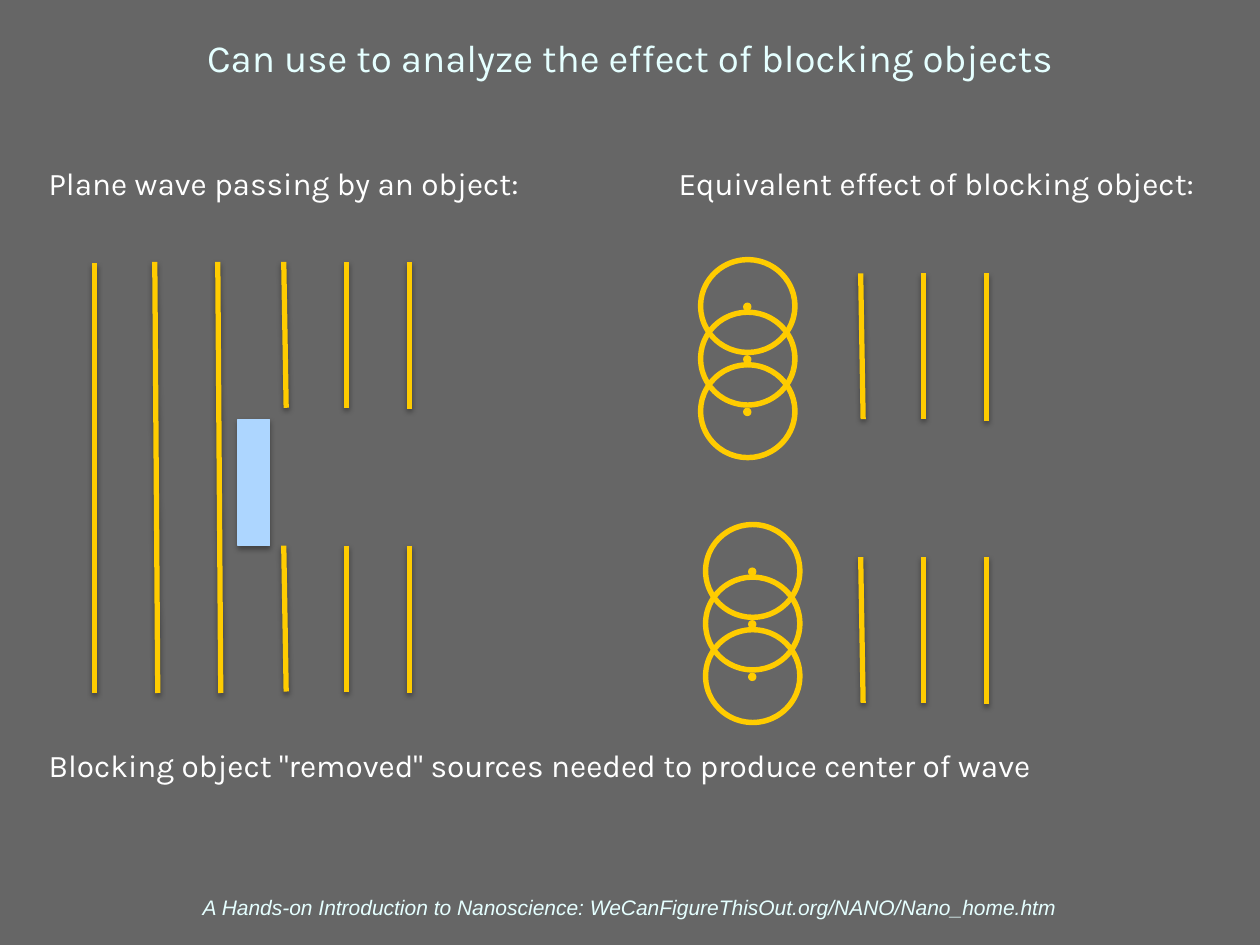
from typing import NamedTuple

from lxml import etree
from pptx import Presentation
from pptx.dml.color import RGBColor
from pptx.enum.shapes import MSO_CONNECTOR as CONN, MSO_SHAPE as SHAPE
from pptx.enum.text import MSO_ANCHOR as ANCHOR, PP_ALIGN as ALIGN
from pptx.oxml.ns import qn
from pptx.util import Cm, Pt

GOLD, BLUE, PALE, WHITE, GREY = "FFCC00", "ADD6FF", "E5FFFF", "FFFFFF", "666666"


class Label(NamedTuple):
    text: str
    x: float
    y: float
    w: float
    h: float
    font: dict
    anchor: ANCHOR = ANCHOR.TOP
    align: ALIGN = ALIGN.LEFT


class Front(NamedTuple):
    """A wave front, drawn as a line from top to bottom."""
    x1: float
    y1: float
    x2: float
    y2: float


class Origin(NamedTuple):
    x: float
    y: float


TITLE = {"name": "Karla", "size": Pt(22), "color": PALE}
BODY = {"name": "Karla", "size": Pt(18), "color": WHITE}
FOOTER = {"name": "Arial", "size": Pt(12), "italic": True, "color": PALE}

LABELS = [
    Label("A Hands-on Introduction to Nanoscience: "
          "WeCanFigureThisOut.org/NANO/Nano_home.htm",
          0.85, 17.93, 23.7, 0.74, FOOTER, ANCHOR.BOTTOM, ALIGN.CENTER),
    Label("Can use to analyze the effect of blocking objects",
          0.85, 0.21, 23.7, 1.9, TITLE, ANCHOR.MIDDLE, ALIGN.CENTER),
    Label("Plane wave passing by an object:", 0.85, 3.18, 12, 1, BODY),
    Label("Equivalent effect of blocking object:", 13.55, 3.18, 11.8, 1, BODY),
    Label('Blocking object "removed" sources needed to produce center of wave',
          0.85, 14.91, 23.7, 1, BODY),
]
FULL_FRONTS = [
    Front(1.91, 5.31, 1.91, 13.97),
    Front(3.12, 5.28, 3.18, 13.97),
    Front(4.39, 5.28, 4.45, 13.97),
]
SHORT_FRONTS = [Origin(5.72, 5.28), Origin(5.72, 11),
                Origin(17.35, 5.51), Origin(17.35, 11.23)]
FRONT_GAP = 1.27
LEANS_AND_HEIGHTS = [(0.05, 2.94), (0, 2.94), (0, 2.97)]
SOURCES = [Origin(14.07, 5.18), Origin(14.17, 10.52)]
SOURCE_GAP = 1.06
SOURCE_COUNT = 3


def rgb(value: str) -> RGBColor:
    return RGBColor.from_string(value)


def add_shadow(sp, distance: float, opacity: int) -> None:
    """Add a soft black shadow that falls straight down."""
    effects = etree.SubElement(sp._element.spPr, qn("a:effectLst"))
    shadow = etree.SubElement(effects, qn("a:outerShdw"), blurRad=str(Pt(3)),
                              dist=str(Pt(distance)), dir="5400000", rotWithShape="0")
    color = etree.SubElement(shadow, qn("a:srgbClr"), val="000000")
    etree.SubElement(color, qn("a:alpha"), val=str(opacity * 1000))


def add_label(s, label: Label) -> None:
    tf = s.shapes.add_textbox(*map(Cm, (label.x, label.y, label.w, label.h))).text_frame
    frame = {"word_wrap": True, "vertical_anchor": label.anchor}
    frame |= {f"margin_{side}": Cm(0.13) for side in ("left", "top", "right", "bottom")}
    for key, value in frame.items():
        setattr(tf, key, value)
    p = tf.paragraphs[0]
    p.alignment = label.align
    r = p.add_run()
    r.text = label.text
    for key, value in label.font.items():
        if key == "color":
            r.font.color.rgb = rgb(value)
        else:
            setattr(r.font, key, value)


def add_filled(s, kind: SHAPE, x: float, y: float, w: float, h: float, color: str):
    sp = s.shapes.add_shape(kind, Cm(x), Cm(y), Cm(w), Cm(h))
    sp.fill.solid()
    sp.fill.fore_color.rgb = rgb(color)
    sp.line.fill.background()
    return sp


def add_front(s, front: Front) -> None:
    line = s.shapes.add_connector(CONN.STRAIGHT, *map(Cm, front))
    line.line.color.rgb = rgb(GOLD)
    line.line.width = Pt(3)
    add_shadow(line, 1.6, 38)


def add_short_fronts(s, origin: Origin) -> None:
    for i, (lean, height) in enumerate(LEANS_AND_HEIGHTS):
        x = origin.x + i * FRONT_GAP
        add_front(s, Front(x, origin.y, x + lean, origin.y + height))


def add_sources(s, origin: Origin) -> None:
    """Draw a column of point sources, each with its circular wave."""
    for i in range(SOURCE_COUNT):
        y = origin.y + i * SOURCE_GAP
        dot = add_filled(s, SHAPE.OVAL, origin.x + 0.91, y + 0.92, 0.17, 0.17, GOLD)
        ring = add_filled(s, SHAPE.DONUT, origin.x, y, 2.01, 1.98, GOLD)
        ring.adjustments[0] = 0.055
        for sp in (dot, ring):
            sp.shadow.inherit = False


def add_block(s) -> None:
    block = add_filled(s, SHAPE.RECTANGLE, 4.8, 8.46, 0.64, 2.54, BLUE)
    block.line.color.rgb = rgb(BLUE)
    block.line.width = Pt(0.75)
    add_shadow(block, 1.8, 35)


def main() -> None:
    prs = Presentation()
    prs.slide_width, prs.slide_height = Cm(25.4), Cm(19.05)
    s = prs.slides.add_slide(prs.slide_layouts[6])
    s.background.fill.solid()
    s.background.fill.fore_color.rgb = rgb(GREY)
    for label in LABELS:
        add_label(s, label)
    for front in FULL_FRONTS:
        add_front(s, front)
    for origin in SHORT_FRONTS:
        add_short_fronts(s, origin)
    add_block(s)
    for origin in SOURCES:
        add_sources(s, origin)
    prs.save("out.pptx")


if __name__ == "__main__":
    main()
